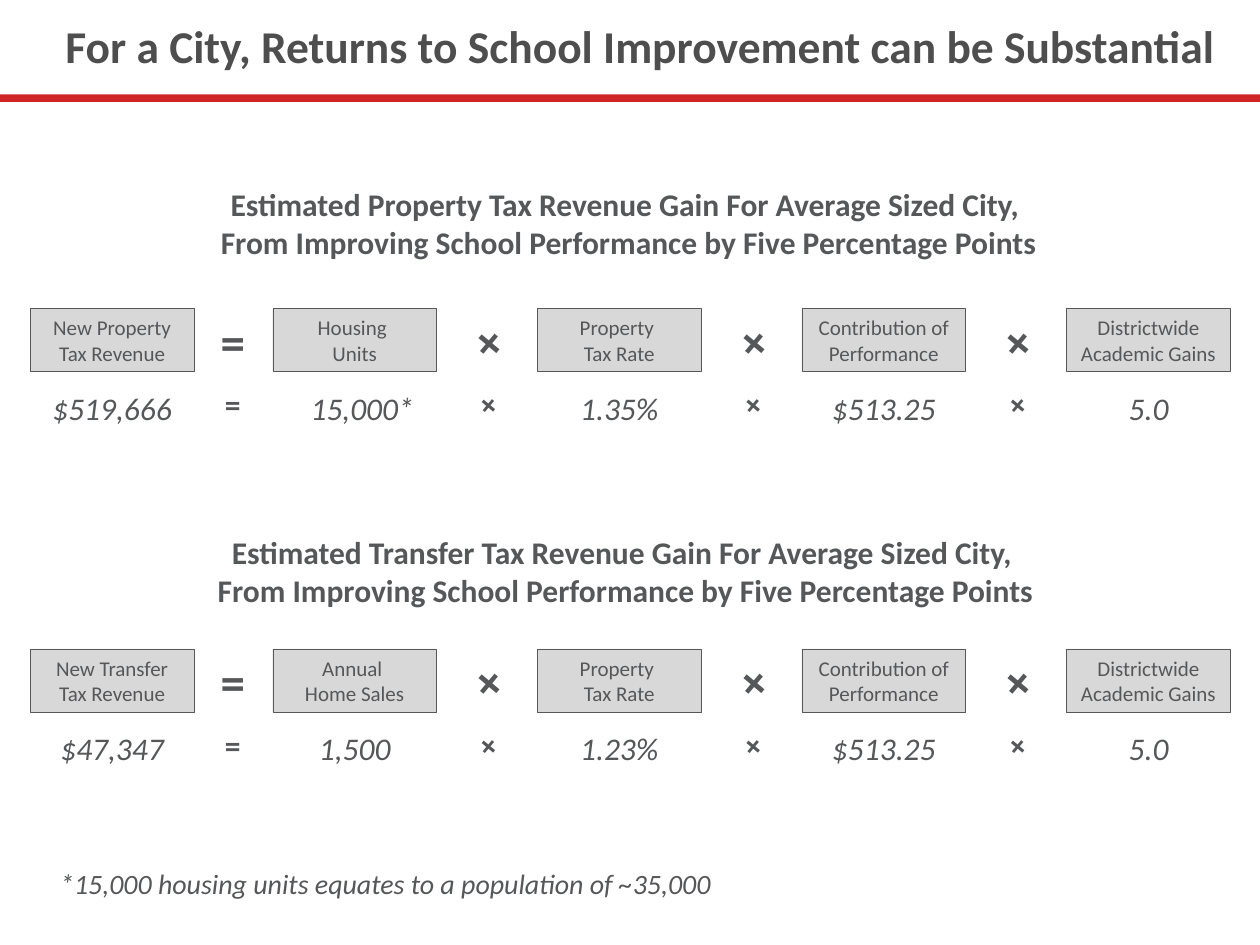
from dataclasses import dataclass

from pptx import Presentation
from pptx.dml.color import RGBColor
from pptx.enum.shapes import MSO_SHAPE as Shape
from pptx.enum.text import MSO_ANCHOR as Anchor, MSO_AUTO_SIZE as AutoSize, PP_ALIGN as Align
from pptx.util import Inches, Pt

COLORS = {"title": "4E4E4E", "text": "565759", "box": "D8D8D8", "rule": "D02526"}
FONT = "Calibri"
BOX_WIDTH, BOX_HEIGHT = 1.3, 0.5
COLUMNS = [0.24] + [2.165 + 2.1 * step for step in range(4)]


@dataclass
class Term:
    label: str
    value: str
    shift: float = 0


@dataclass
class Equation:
    heading: str
    heading_left: float
    heading_top: float
    heading_width: float
    box_top: float
    terms: list[Term]


SHARED_TERMS = [
    Term("Contribution of Performance", "$513.25"),
    Term("Districtwide Academic Gains", "5.0"),
]
EQUATIONS = [
    Equation("Property", 0.42, 1.42, 9.14, 2.45, [
        Term("New Property Tax Revenue", "$519,666"),
        Term("Housing \nUnits", "15,000*", 0.06),
        Term("Property \nTax Rate", "1.35%"),
        *SHARED_TERMS,
    ]),
    Equation("Transfer", 0.42, 4.18, 9.09, 5.15, [
        Term("New Transfer Tax Revenue", "$47,347"),
        Term("Annual \vHome Sales", "1,500"),
        Term("Property \nTax Rate", "1.23%"),
        *SHARED_TERMS,
    ]),
]


def color(name: str) -> RGBColor:
    """Return the named colour."""
    return RGBColor.from_string(COLORS[name])


def write(shape, text: str, *, size: float, ink: str = "text", bold: bool = False,
          italic: bool = False, align=Align.LEFT, wrap: bool = True,
          anchor=Anchor.TOP, auto_size=AutoSize.SHAPE_TO_FIT_TEXT) -> None:
    """Fill a shape with formatted text."""
    frame = shape.text_frame
    frame.text = text
    frame.word_wrap = wrap
    frame.vertical_anchor = anchor
    frame.auto_size = auto_size
    for paragraph in frame.paragraphs:
        paragraph.alignment = align
        for run in paragraph.runs:
            font = run.font
            font.name, font.size = FONT, Pt(size)
            font.bold, font.italic = bold, italic
            font.color.rgb = color(ink)


def add_text(shapes, text: str, left: float, top: float, width: float, height: float,
             rotation: float = 0, **style) -> None:
    """Add a text box."""
    shape = shapes.add_textbox(Inches(left), Inches(top), Inches(width), Inches(height))
    shape.rotation = rotation
    write(shape, text, **style)


def add_rectangle(shapes, left: float, top: float, width: float, height: float, fill: str):
    """Add a plain filled rectangle."""
    shape = shapes.add_shape(Shape.RECTANGLE, Inches(left), Inches(top), Inches(width), Inches(height))
    shape.shadow.inherit = False
    shape.fill.solid()
    shape.fill.fore_color.rgb = color(fill)
    shape.line.fill.background()
    return shape


def add_term(shapes, term: Term, left: float, top: float) -> None:
    """Add a labelled box with its value below."""
    box = add_rectangle(shapes, left, top, BOX_WIDTH, BOX_HEIGHT, "box")
    box.line.color.rgb = color("text")
    box.line.width = Pt(0.25)
    write(box, term.label, size=12, align=Align.CENTER)
    width = 0.13 * len(term.value) + 0.2
    center = left + BOX_WIDTH / 2 + term.shift
    add_text(shapes, term.value, center - width / 2, top + 0.59, width, 0.4,
             size=18, italic=True, align=Align.CENTER, wrap=False)


def add_operator(shapes, index: int, top: float) -> None:
    """Add the large and small operator in the gap after a column."""
    center = (COLUMNS[index] + BOX_WIDTH + COLUMNS[index + 1]) / 2
    sign, rotation = ("=", 0) if index == 0 else ("+", 310)
    for offset, width, height, size in ((-0.03, 0.4, 0.57, 28), (0.56, 0.33, 0.4, 18)):
        add_text(shapes, sign, center - width / 2, top + offset, width, height,
                 rotation, size=size, bold=True, wrap=False)


def add_equation(slide, equation: Equation) -> None:
    """Add a heading and its row of terms as one group."""
    shapes = slide.shapes.add_group_shape().shapes
    heading = (f"Estimated {equation.heading} Tax Revenue Gain For Average Sized City, \v"
               "From Improving School Performance by Five Percentage Points")
    add_text(shapes, heading, equation.heading_left, equation.heading_top,
             equation.heading_width, 0.71, size=18, bold=True, align=Align.CENTER)
    for left, term in zip(COLUMNS, equation.terms):
        add_term(shapes, term, left, equation.box_top)
    for index in range(len(COLUMNS) - 1):
        add_operator(shapes, index, equation.box_top)


def main() -> None:
    """Build the slide and save it."""
    presentation = Presentation()
    presentation.slide_width, presentation.slide_height = Inches(10), Inches(7.5)
    slide = presentation.slides.add_slide(presentation.slide_layouts[6])
    add_rectangle(slide.shapes, 0, 0.75, 10, 0.06, "rule")
    add_text(slide.shapes, "For a City, Returns to School Improvement can be Substantial",
             0.42, 0.05, 9.58, 0.62, size=26, ink="title", bold=True,
             anchor=Anchor.MIDDLE, auto_size=AutoSize.NONE)
    for equation in EQUATIONS:
        add_equation(slide, equation)
    add_text(slide.shapes, "*15,000 housing units equates to a population of ~35,000",
             0.38, 6.83, 5.44, 0.37, size=16, italic=True, wrap=False)
    presentation.save("out.pptx")


if __name__ == "__main__":
    main()
